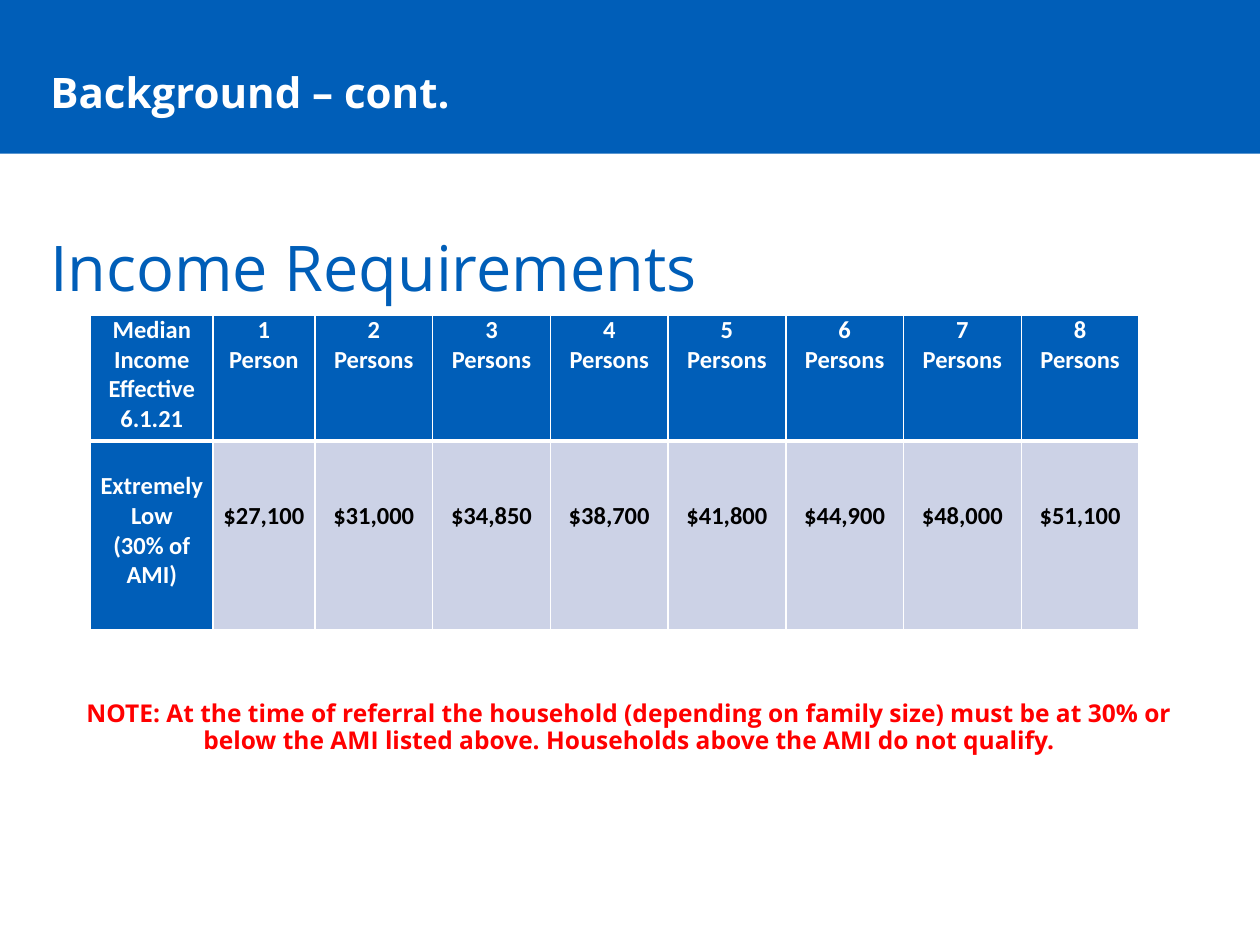
from lxml.etree import fromstring
from pptx import Presentation
from pptx.dml.color import RGBColor
from pptx.enum.shapes import MSO_SHAPE as Shape
from pptx.enum.text import MSO_ANCHOR as Anchor, PP_ALIGN as Align
from pptx.util import Inches, Pt

BLUE = RGBColor(0x00, 0x5E, 0xB8)
PALE = RGBColor(0xCC, 0xD2, 0xE6)
WHITE = RGBColor(0xFF, 0xFF, 0xFF)
BLACK = RGBColor(0x00, 0x00, 0x00)
RED = RGBColor(0xFF, 0x00, 0x00)
NS = "http://schemas.openxmlformats.org/drawingml/2006/main"
LINE = 0.24

HEADS = ["Median Income\nEffective 6.1.21", "1 Person"]
HEADS += [f"{n}\nPersons" for n in range(2, 9)]
LIMITS = ["Extremely Low\n(30% of AMI)", "$27,100", "$31,000", "$34,850",
          "$38,700", "$41,800", "$44,900", "$48,000", "$51,100"]


class Deck:
    """Hold the style and the current slide, and draw each kind of element."""

    def __init__(self):
        self.prs = Presentation()
        self.prs.slide_width, self.prs.slide_height = Inches(10), Inches(7.5)
        self.font = "Open Sans"
        self.slide = self.prs.slides.add_slide(self.prs.slide_layouts[5])

    def fill(self, frame, text, size, color, bold=False, align=Align.LEFT, font=None):
        frame.text = text
        frame.word_wrap = True
        for para in frame.paragraphs:
            para.alignment = align
            para.font.name = font or self.font
            para.font.size = Pt(size)
            para.font.bold = bold
            para.font.color.rgb = color

    def title(self, text):
        title = self.slide.shapes.title
        title.left, title.top = Inches(0.3), Inches(0.31)
        title.width, title.height = Inches(8.98), Inches(0.84)
        title.text_frame.vertical_anchor = Anchor.MIDDLE
        self.fill(title.text_frame, text, 24, WHITE, True)

    def band(self, height):
        band = self.slide.shapes.add_shape(
            Shape.RECTANGLE, 0, 0, self.prs.slide_width, Inches(height))
        band.shadow.inherit = False
        band.fill.solid()
        band.fill.fore_color.rgb = BLUE
        band.line.fill.background()
        self.slide.shapes.title.element.addprevious(band.element)

    def text(self, text, top, height, size, color, bold=False, align=Align.LEFT):
        box = self.slide.shapes.add_textbox(
            Inches(0.3), Inches(top), Inches(9.39), Inches(height))
        frame = box.text_frame
        frame.vertical_anchor = Anchor.MIDDLE
        self.fill(frame, text, size, color, bold, align)
        for para in frame.paragraphs:
            para.line_spacing = 0.9

    def cell(self, cell, text, fill, color, drop, edges):
        cell.margin_left = cell.margin_right = Inches(0.07)
        cell.margin_top, cell.margin_bottom = Inches(drop), 0
        self.fill(cell.text_frame, text, 14, color, True, Align.CENTER, "Calibri")
        cell.fill.solid()
        cell.fill.fore_color.rgb = fill
        props = cell._tc.get_or_add_tcPr()
        for i, (side, width) in enumerate(zip("LRTB", edges)):
            props.insert(i, fromstring(
                f'<a:ln{side} xmlns:a="{NS}" w="{Pt(width)}"><a:solidFill>'
                f'<a:srgbClr val="{WHITE}"/></a:solidFill></a:ln{side}>'))

    def table(self, rows, left, top, widths, heights):
        table = self.slide.shapes.add_table(
            len(heights), len(widths), Inches(left), Inches(top),
            Inches(sum(widths)), Inches(sum(heights))).table
        for col, width in zip(table.columns, widths):
            col.width = Inches(width)
        for r, (row, height) in enumerate(zip(rows, heights)):
            table.rows[r].height = Inches(height)
            edges = (1, 1, 3, 1) if r else (1, 1, 1, 3)
            for c, text in enumerate(row):
                head = r == 0 or c == 0
                drop = r * LINE * (1 if head else 2)
                self.cell(table.cell(r, c), text, BLUE if head else PALE,
                          WHITE if head else BLACK, drop, edges)


def main():
    deck = Deck()
    deck.band(1.22)
    deck.title("Background – cont.")
    deck.text("Income Requirements", 1.75, 0.8, 36, BLUE)
    wide = (8.32 - 0.97 - 0.81) / 7
    deck.table([HEADS, LIMITS], 0.72, 2.5, [0.97, 0.81] + [wide] * 7, [1, 1.5])
    deck.text("NOTE: At the time of referral the household (depending on family size) "
              "must be at 30% or below the AMI listed above. Households above the AMI "
              "do not qualify.", 5.43, 0.7, 14, RED, True, Align.CENTER)
    deck.prs.save("out.pptx")


if __name__ == "__main__":
    main()
